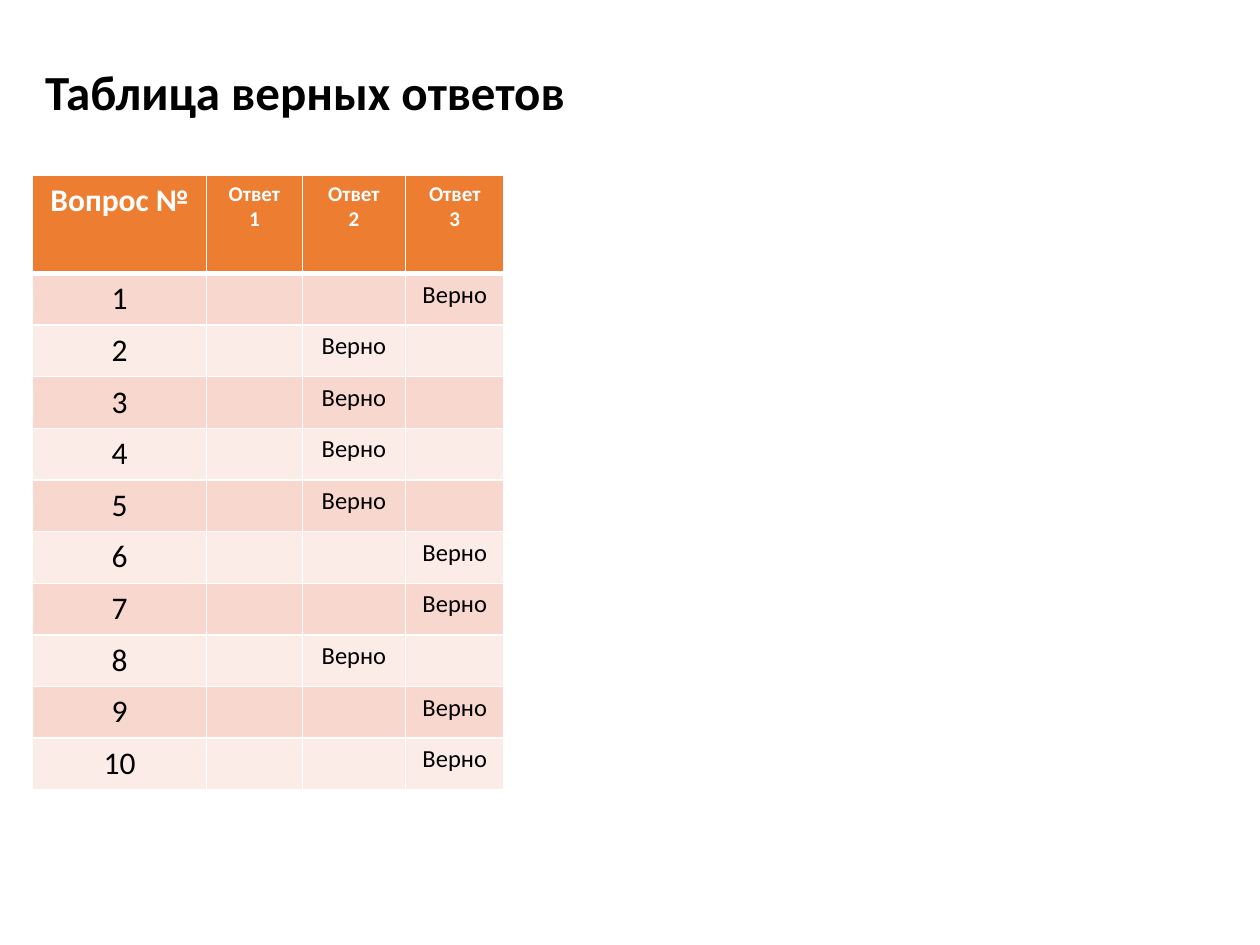
from lxml import etree
from pptx import Presentation
from pptx.dml.color import RGBColor
from pptx.enum.text import MSO_AUTO_SIZE, PP_ALIGN
from pptx.oxml.ns import qn
from pptx.util import Inches, Pt

CENTER = PP_ALIGN.CENTER
LEFT = PP_ALIGN.LEFT
FIT = MSO_AUTO_SIZE.SHAPE_TO_FIT_TEXT

HUES = {"head": "ED7D31", "odd": "F8D7CE", "even": "FCECE8",
        "ink": "000000", "white": "FFFFFF"}
FONTS = {
    "title": {"size": Pt(28), "bold": True},
    "label": {"size": Pt(18), "bold": True},
    "head": {"size": Pt(12), "bold": True},
    "count": {"size": Pt(18), "bold": False},
    "mark": {"size": Pt(14), "bold": False},
}
LEAD = 0.26
COLS = [1.38, 0.76, 0.82, 0.78]
HEAD_TALL, ROW_TALL = 0.78, 0.41
KEYS = [3, 2, 2, 2, 2, 3, 3, 2, 3, 3]


def write(frame, text, kind, hue, align):
    """Fill a text frame, one paragraph per line, in the named style."""
    frame.text = text
    for para in frame.paragraphs:
        para.alignment = align
        para.font.name = "Calibri"
        para.font.color.rgb = RGBColor.from_string(HUES[hue])
        for name, value in FONTS[kind].items():
            setattr(para.font, name, value)


def edge(cell, side, width):
    """Draw one white border of a cell."""
    line = etree.SubElement(cell._tc.get_or_add_tcPr(), qn(f"a:ln{side}"),
                            w=str(Pt(width)))
    fill = etree.SubElement(line, qn("a:solidFill"))
    etree.SubElement(fill, qn("a:srgbClr"), val=HUES["white"])


def paint(cell, row):
    """Set the borders and the band fill of a cell."""
    thick = {(0, "B"), (1, "T")}
    for side in "LRTB":
        edge(cell, side, 3 if (row, side) in thick else 1)
    band = "head" if row == 0 else "odd" if row % 2 else "even"
    cell.fill.solid()
    cell.fill.fore_color.rgb = RGBColor.from_string(HUES[band])


def add_title(slide, text):
    """Add the slide heading."""
    box = slide.shapes.add_textbox(*map(Inches, (LEAD, 0.44, 4.37, 0.57)))
    box.text_frame.word_wrap = False
    box.text_frame.auto_size = FIT
    write(box.text_frame, text, "title", "ink", LEFT)


def add_grid(slide):
    """Add the table of right answers."""
    talls = [HEAD_TALL] + [ROW_TALL] * len(KEYS)
    size = (LEAD, 1.39, sum(COLS), sum(talls))
    grid = slide.shapes.add_table(len(talls), len(COLS),
                                  *map(Inches, size)).table
    for col, width in zip(grid.columns, COLS):
        col.width = Inches(width)
    for num, tall in enumerate(talls):
        grid.rows[num].height = Inches(tall)
        for cell in grid.rows[num].cells:
            paint(cell, num)
    for col in range(len(COLS)):
        text, kind = (f"Ответ\n{col}", "head") if col else ("Вопрос №", "label")
        write(grid.cell(0, col).text_frame, text, kind, "white", CENTER)
    for num, key in enumerate(KEYS, 1):
        write(grid.cell(num, 0).text_frame, str(num), "count", "ink", CENTER)
        write(grid.cell(num, key).text_frame, "Верно", "mark", "ink", CENTER)


def main():
    """Build and save the slide."""
    deck = Presentation()
    deck.slide_width, deck.slide_height = Inches(10), Inches(7.5)
    slide = deck.slides.add_slide(deck.slide_layouts[6])
    add_title(slide, "Таблица верных ответов")
    add_grid(slide)
    deck.save("out.pptx")


if __name__ == "__main__":
    main()
